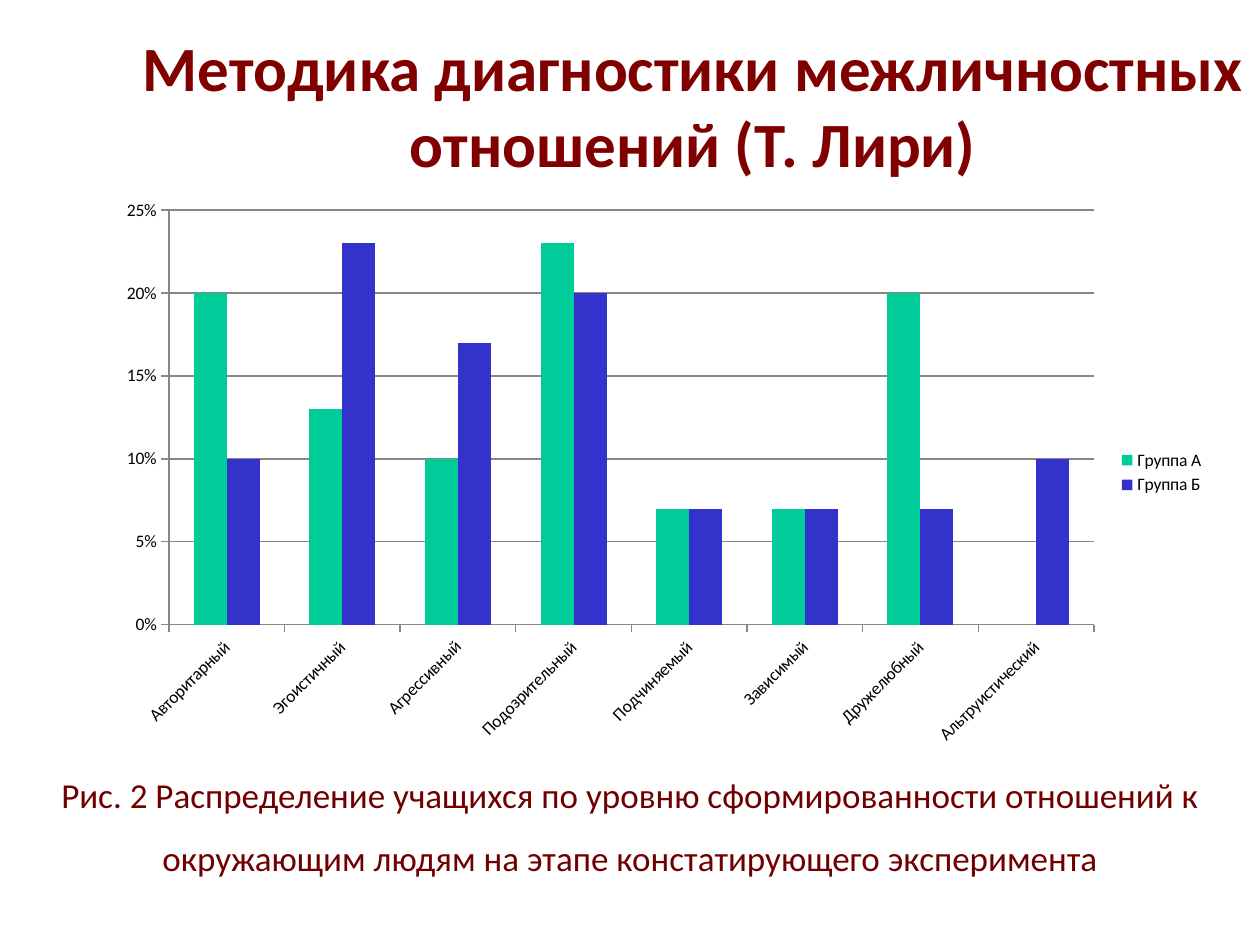
from pptx import Presentation
from pptx.chart.data import CategoryChartData
from pptx.dml.color import RGBColor
from pptx.enum.chart import XL_CHART_TYPE as CT, XL_LEGEND_POSITION as LP, XL_TICK_MARK as TM
from pptx.enum.text import MSO_ANCHOR as MA, PP_ALIGN as PA
from pptx.oxml.ns import qn
from pptx.util import Cm, Pt


def rgb(value):
    """Turn a hex string into a colour."""
    return RGBColor.from_string(value)


class Deck:
    """Hold the style and the current slide."""

    FONT, TITLE, CAPTION, TEXT, LINE = "Calibri", "800000", "700000", "000000", "878787"

    def __init__(self, width, height):
        """Start a deck with one title-only slide."""
        self.prs = Presentation()
        self.prs.slide_width, self.prs.slide_height = Cm(width), Cm(height)
        self.s = self.prs.slides.add_slide(self.prs.slide_layouts[5])

    def style(self, font, size, color, bold=False):
        """Apply the deck font to a font object."""
        font.name, font.size, font.bold = self.FONT, Pt(size), bold
        font.color.rgb = rgb(color)

    def run(self, p, text, size, color, bold=False):
        """Add one styled run to a paragraph."""
        r = p.add_run()
        r.text = text
        self.style(r.font, size, color, bold)

    def title(self, lines, x, y, w, h, bottom):
        """Place the title and break it into lines."""
        sp = self.s.shapes.title
        sp.left, sp.top, sp.width, sp.height = Cm(x), Cm(y), Cm(w), Cm(h)
        tf = sp.text_frame
        tf.word_wrap, tf.vertical_anchor = True, MA.BOTTOM
        tf.margin_bottom = Cm(bottom)
        p = tf.paragraphs[0]
        p.alignment = PA.CENTER
        for i, line in enumerate(lines):
            if i:
                p.add_line_break()
            self.run(p, line, 36, self.TITLE, True)

    def caption(self, text, x, y, w, h):
        """Add the centred figure caption."""
        tf = self.s.shapes.add_textbox(Cm(x), Cm(y), Cm(w), Cm(h)).text_frame
        tf.word_wrap = True
        p = tf.paragraphs[0]
        p.alignment, p.line_spacing = PA.CENTER, 1.5
        self.run(p, text, 20, self.CAPTION)

    def columns(self, cats, series, x, y, w, h):
        """Add a clustered column chart of percentages."""
        data = CategoryChartData(number_format="0%")
        data.categories = cats
        for name, _, vals in series:
            data.add_series(name, vals)
        chart = self.s.shapes.add_chart(
            CT.COLUMN_CLUSTERED, Cm(x), Cm(y), Cm(w), Cm(h), data).chart
        self.style(chart.font, 10, self.TEXT)
        chart.has_title = False
        chart.has_legend = True
        chart.legend.position, chart.legend.include_in_layout = LP.RIGHT, False
        plot = chart.plots[0]
        plot.gap_width, plot.overlap, plot.vary_by_categories = 150, 0, False
        for ser, (_, color, _) in zip(plot.series, series):
            ser.format.fill.solid()
            ser.format.fill.fore_color.rgb = rgb(color)
            ser.invert_if_negative = False
        cat, val = chart.category_axis, chart.value_axis
        for axis in (cat, val):
            axis.major_tick_mark, axis.minor_tick_mark = TM.OUTSIDE, TM.NONE
            axis.format.line.color.rgb = rgb(self.LINE)
            self.style(axis.tick_labels.font, 10, self.TEXT)
        body = cat._element.find(qn("c:txPr")).find(qn("a:bodyPr"))
        body.set("rot", "-2700000")
        val.minimum_scale, val.maximum_scale, val.major_unit = 0, 0.25, 0.05
        val.tick_labels.number_format = "0%"
        val.tick_labels.number_format_is_linked = False
        val.has_major_gridlines = True
        val.major_gridlines.format.line.color.rgb = rgb(self.LINE)


def main():
    """Build the slide and save it."""
    deck = Deck(25.4, 19.05)
    deck.title(["Методика диагностики межличностных", "отношений (Т. Лири)"],
               2.54, 0.03, 22.86, 5.28, 1.68)
    deck.caption("Рис. 2 Распределение учащихся по уровню сформированности отношений "
                 "к окружающим людям на этапе констатирующего эксперимента",
                 0.64, 15.04, 24.13, 3.18)
    cats = ["Авторитарный", "Эгоистичный", "Агрессивный", "Подозрительный",
            "Подчиняемый", "Зависимый", "Дружелюбный", "Альтруистический"]
    series = [("Группа А", "00CC99", [0.2, 0.13, 0.1, 0.23, 0.07, 0.07, 0.2, 0]),
              ("Группа Б", "3333CC", [0.1, 0.23, 0.17, 0.2, 0.07, 0.07, 0.07, 0.1])]
    deck.columns(cats, series, 2.11, 3.81, 22.43, 11.43)
    deck.prs.save("out.pptx")


if __name__ == "__main__":
    main()
